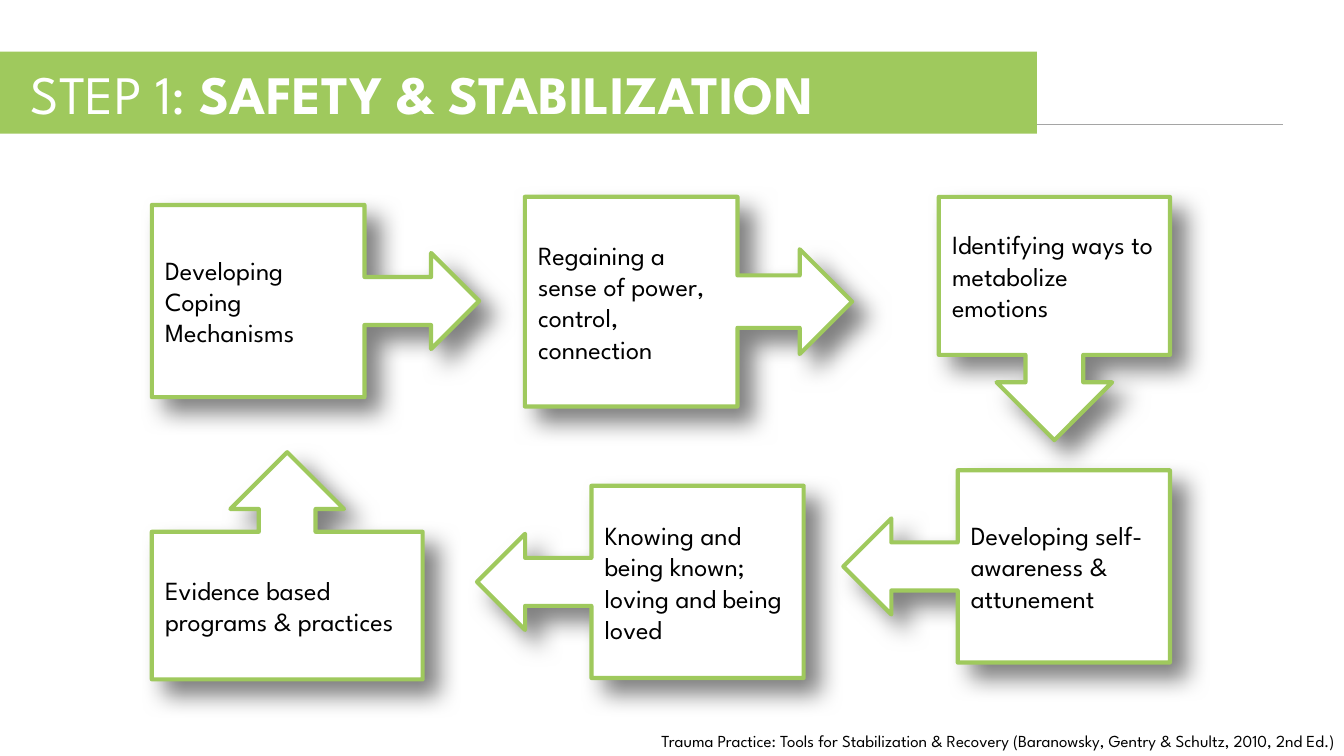
"""Build the Safety & Stabilization slide: six callouts in a cycle."""
from lxml.etree import SubElement
from pptx import Presentation
from pptx.dml.color import RGBColor
from pptx.enum.shapes import MSO_CONNECTOR, MSO_SHAPE
from pptx.enum.text import MSO_ANCHOR, MSO_AUTO_SIZE, PP_ALIGN
from pptx.oxml import parse_xml
from pptx.oxml.ns import nsdecls, qn
from pptx.util import Emu, Pt

PX = 4572
FONT = "League Spartan"
GREEN, WHITE, BLACK, GRAY = "9FC95D", "FFFFFF", "000000", "A5A5A5"
SHADOW = (
    f'<a:effectLst {nsdecls("a")}>'
    f'<a:outerShdw blurRad="{Pt(12.4)}" dist="{Pt(10.5)}" dir="{44 * 60000}" algn="tl" rotWithShape="0">'
    f'<a:srgbClr val="{BLACK}"><a:alpha val="50000"/></a:srgbClr>'
    "</a:outerShdw></a:effectLst>"
)


def px(*lengths):
    return [Emu(length * PX) for length in lengths]


def style(font, size, color):
    font.name, font.size = FONT, Pt(size)
    font.color.rgb = RGBColor.from_string(color)


deck = Presentation()
deck.slide_width, deck.slide_height = px(2000, 1125)
page = deck.slides.add_slide(deck.slide_layouts[5])

title = page.shapes.title
title.left, title.top, title.width, title.height = px(-54, 77, 1597, 122)
title.fill.solid()
title.fill.fore_color.rgb = RGBColor.from_string(GREEN)
frame = title.text_frame
frame.auto_size = MSO_AUTO_SIZE.NONE
frame.vertical_anchor = MSO_ANCHOR.MIDDLE
frame.margin_left, frame.margin_top, frame.margin_right, frame.margin_bottom = px(100, 0, 0, 0)
para = frame.paragraphs[0]
para.alignment = PP_ALIGN.LEFT
style(para.font, 29, WHITE)
for text, bold in [("STEP 1: ", False), ("SAFETY & STABILIZATION", True)]:
    span = para.add_run()
    span.text = text
    span.font.bold = bold

rule = page.shapes.add_connector(MSO_CONNECTOR.STRAIGHT, *px(90, 185, 1909, 185))
rule.line.color.rgb = RGBColor.from_string(GRAY)
rule.line.width = Pt(0.75)
SubElement(rule.element.spPr, qn("a:effectLst"))
title.element.addprevious(rule.element)

citation = page.shapes.add_textbox(*px(180, 1080, 1819, 46))
frame = citation.text_frame
frame.word_wrap = True
frame.margin_left, frame.margin_top, frame.margin_right, frame.margin_bottom = px(14, 8, 14, 8)
para = frame.paragraphs[0]
para.text = "Trauma Practice: Tools for Stabilization & Recovery (Baranowsky, Gentry & Schultz, 2010, 2nd Ed.)"
para.alignment = PP_ALIGN.RIGHT
style(para.font, 9, BLACK)

RIGHT, DOWN = MSO_SHAPE.RIGHT_ARROW_CALLOUT, MSO_SHAPE.DOWN_ARROW_CALLOUT
LEFT, UP = MSO_SHAPE.LEFT_ARROW_CALLOUT, MSO_SHAPE.UP_ARROW_CALLOUT
callouts = [
    (RIGHT, 226, 305, 487, 286, "Developing Coping Mechanisms"),
    (RIGHT, 781, 293, 487, 312, "Regaining a sense of power, control, connection"),
    (DOWN, 1397, 293, 344, 362, "Identifying ways to metabolize emotions"),
    (LEFT, 1255, 700, 486, 286, "Developing self-awareness & attunement"),
    (LEFT, 710, 723, 486, 286, "Knowing and being known; loving and being loved"),
    (UP, 226, 673, 403, 338, "Evidence based programs & practices"),
]
for kind, left, top, width, height, text in callouts:
    box = page.shapes.add_shape(kind, *px(left, top, width, height))
    box.fill.solid()
    box.fill.fore_color.rgb = RGBColor.from_string(WHITE)
    box.line.color.rgb = RGBColor.from_string(GREEN)
    box.line.width = Pt(2.25)
    box.element.spPr.append(parse_xml(SHADOW))
    frame = box.text_frame
    frame.word_wrap = True
    frame.vertical_anchor = MSO_ANCHOR.MIDDLE
    frame.margin_left, frame.margin_top, frame.margin_right, frame.margin_bottom = px(20, 20, 20, 20)
    para = frame.paragraphs[0]
    para.text = text
    para.alignment = PP_ALIGN.LEFT
    style(para.font, 14, BLACK)

deck.save("out.pptx")
